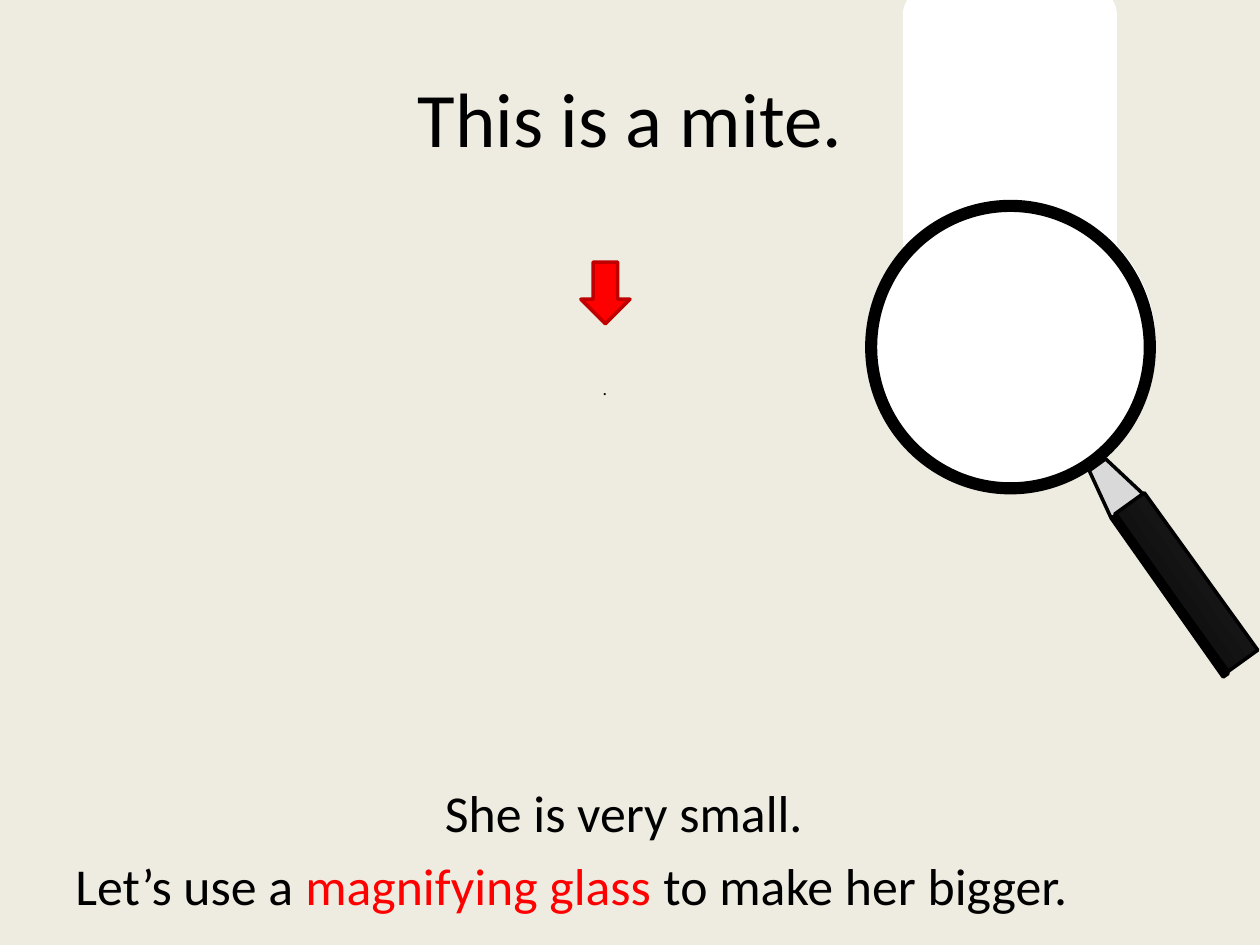
from pptx import Presentation
from pptx.dml.color import RGBColor
from pptx.enum.shapes import MSO_SHAPE
from pptx.enum.text import MSO_ANCHOR, PP_ALIGN
from pptx.util import Inches, Pt

CREAM = RGBColor(0xEE, 0xEC, 0xE1)
BLACK = RGBColor(0, 0, 0)
COAL = RGBColor(0x26, 0x26, 0x26)
WHITE = RGBColor(0xFF, 0xFF, 0xFF)
GREY = RGBColor(0xD9, 0xD9, 0xD9)
RED = RGBColor(0xFF, 0, 0)
DARK_RED = RGBColor(0xC0, 0, 0)


def add_run(para, text, size, color=BLACK):
    run = para.add_run()
    run.text = text
    run.font.name = "Calibri"
    run.font.size = Pt(size)
    run.font.color.rgb = color


def set_title(slide, text):
    title = slide.shapes.title
    title.left, title.top = Inches(0.5), Inches(0.3)
    title.width, title.height = Inches(9), Inches(1.25)
    frame = title.text_frame
    frame.vertical_anchor = MSO_ANCHOR.MIDDLE
    para = frame.paragraphs[0]
    para.alignment = PP_ALIGN.CENTER
    add_run(para, text, 44)


def add_box(slide, left, top, width, height):
    box = slide.shapes.add_textbox(
        Inches(left), Inches(top), Inches(width), Inches(height))
    box.text_frame.word_wrap = True
    return box.text_frame


def add_mite(slide):
    """The mite is a single full stop below the arrow."""
    frame = add_box(slide, 4.65, 3, 0.3, 0.2)
    frame.margin_left = frame.margin_right = 0
    frame.margin_top = frame.margin_bottom = 0
    para = frame.paragraphs[0]
    para.alignment = PP_ALIGN.CENTER
    add_run(para, ".", 10.2)


def add_story(slide):
    frame = add_box(slide, 0.5, 6.15, 9, 1.2)
    first = frame.paragraphs[0]
    first.alignment = PP_ALIGN.CENTER
    add_run(first, "She is very small. ", 29.6)
    second = frame.add_paragraph()
    second.space_before = Pt(5.9)
    add_run(second, "Let’s use a ", 29.6)
    add_run(second, "magnifying glass ", 29.6, RED)
    add_run(second, "to make her bigger.", 29.6)


def add_part(shapes, kind, left, top, width, height, fill, line, turn=0):
    part = shapes.add_shape(
        kind, Inches(left), Inches(top), Inches(width), Inches(height))
    part.rotation = turn
    part.shadow.inherit = False
    part.fill.solid()
    part.fill.fore_color.rgb = fill
    part.line.color.rgb = line
    part.line.width = Pt(2)
    return part


def shade(part, start, end):
    part.fill.gradient()
    part.fill.gradient_angle = 0
    for stop, color in zip(part.fill.gradient_stops, (start, end)):
        stop.color.rgb = color


def add_glass(slide):
    add_part(slide.shapes, MSO_SHAPE.OVAL, 6.89, 1.6, 2.27, 2.25, WHITE, WHITE)
    parts = slide.shapes.add_group_shape().shapes
    add_part(parts, MSO_SHAPE.FLOWCHART_STORED_DATA,
             6.87, 0.04, 2.29, 1.67, WHITE, WHITE, 90)
    ring = add_part(parts, MSO_SHAPE.DONUT, 6.88, 1.6, 2.28, 2.31, BLACK, BLACK)
    ring.adjustments[0] = 0.03
    add_part(parts, MSO_SHAPE.TRAPEZOID,
             8.67, 3.65, 0.32, 0.41, GREY, BLACK, 324.2)
    handle = add_part(parts, MSO_SHAPE.RECTANGLE,
                      9.27, 3.85, 0.29, 1.54, BLACK, BLACK, 324.2)
    shade(handle, BLACK, COAL)
    add_part(parts, MSO_SHAPE.RECTANGLE,
             9.26, 3.96, 0.05, 1.54, BLACK, BLACK, 324.8)


def main():
    deck = Presentation()
    deck.slide_width, deck.slide_height = Inches(10), Inches(7.5)
    slide = deck.slides.add_slide(deck.slide_layouts[5])
    slide.background.fill.solid()
    slide.background.fill.fore_color.rgb = CREAM
    set_title(slide, "This is a mite.")
    add_mite(slide)
    add_story(slide)
    add_part(slide.shapes, MSO_SHAPE.DOWN_ARROW,
             4.61, 2.08, 0.39, 0.49, RED, DARK_RED)
    add_glass(slide)
    deck.save("out.pptx")


if __name__ == "__main__":
    main()
